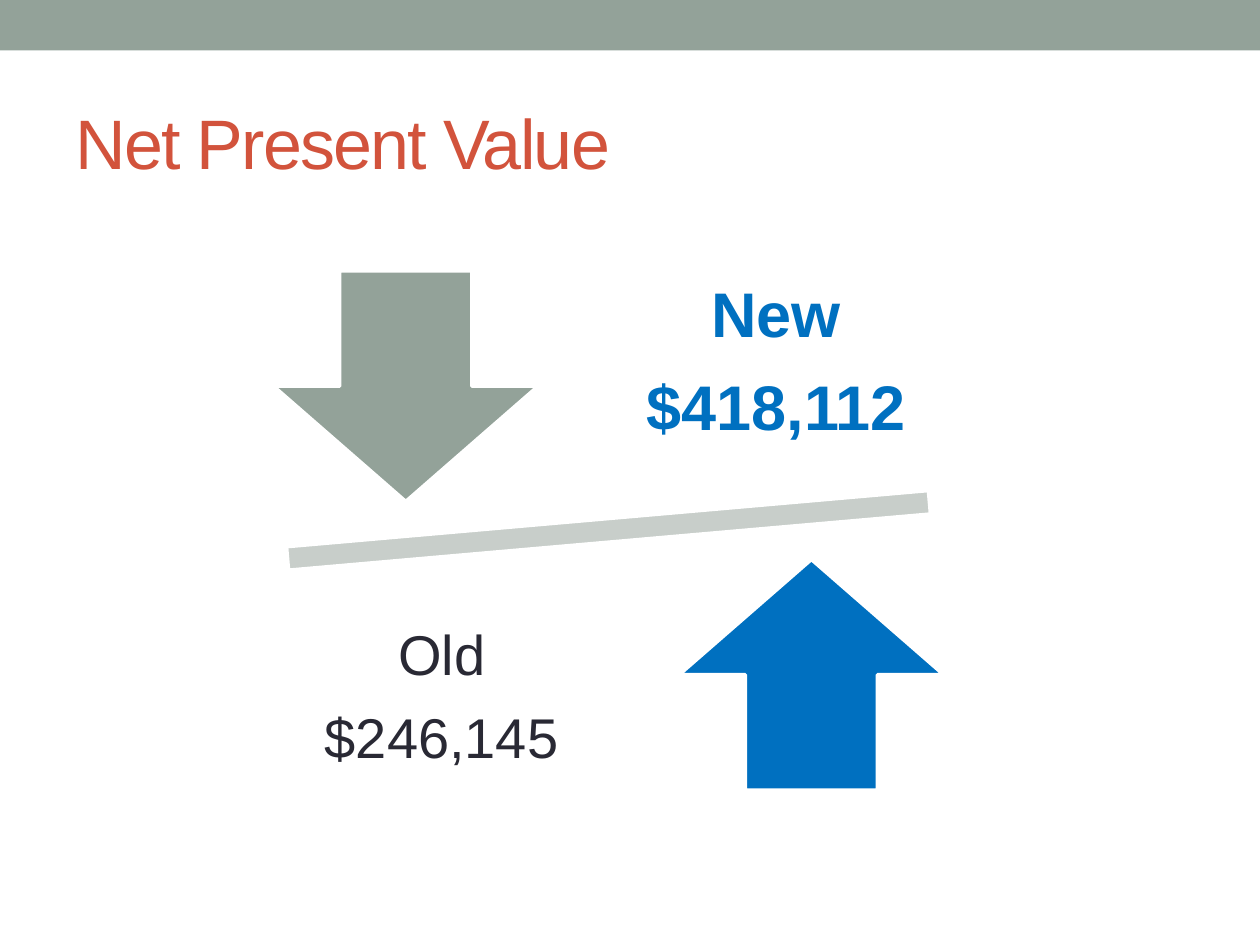
from dataclasses import dataclass

from pptx import Presentation
from pptx.dml.color import RGBColor
from pptx.enum.shapes import MSO_SHAPE
from pptx.enum.text import MSO_ANCHOR, PP_ALIGN
from pptx.util import Pt


@dataclass(frozen=True)
class Theme:
    font: str = "Arial"
    sage: str = "93A299"
    pale_sage: str = "C8CECA"
    red: str = "D2533C"
    blue: str = "0070C0"
    dark: str = "292934"
    white: str = "FFFFFF"
    title_size: int = 40
    new_size: int = 36
    old_size: int = 32
    outline: float = 2.08


def write_text(frame, lines, *, font, size, color, bold=False, align=PP_ALIGN.LEFT,
               line_spacing=1.0, space_after=0, tracking=0):
    for index, line in enumerate(lines):
        paragraph = frame.add_paragraph() if index else frame.paragraphs[0]
        paragraph.alignment = align
        paragraph.line_spacing = line_spacing
        paragraph.space_after = Pt(space_after)
        run = paragraph.add_run()
        run.text = line
        run.font.name = font
        run.font.size = Pt(size)
        run.font.bold = bold
        run.font.color.rgb = RGBColor.from_string(color)
        if tracking:
            run.font._element.set("spc", str(tracking * 100))


class SlideBuilder:
    def __init__(self, slide, theme):
        self.slide = slide
        self.theme = theme

    def shape(self, kind, box, color, outlined=True, rotation=0):
        shape = self.slide.shapes.add_shape(kind, *map(Pt, box))
        shape.shadow.inherit = False
        shape.rotation = rotation
        shape.fill.solid()
        shape.fill.fore_color.rgb = RGBColor.from_string(color)
        if outlined:
            shape.line.color.rgb = RGBColor.from_string(self.theme.white)
            shape.line.width = Pt(self.theme.outline)
        else:
            shape.line.fill.background()

    def text(self, lines, box, margins=(7.2, 3.6), **text_format):
        frame = self.slide.shapes.add_textbox(*map(Pt, box)).text_frame
        frame.word_wrap = True
        frame.vertical_anchor = MSO_ANCHOR.MIDDLE
        frame.margin_left = frame.margin_right = Pt(margins[0])
        frame.margin_top = frame.margin_bottom = Pt(margins[1])
        write_text(frame, lines, font=self.theme.font, **text_format)

    def value(self, label, amount, box, size, color, bold=False):
        inset = size * 0.56
        self.text([label, amount], box, (inset, inset), size=size, color=color, bold=bold,
                  align=PP_ALIGN.CENTER, line_spacing=0.9, space_after=round(size * 0.39, 1))


def main():
    theme = Theme()
    presentation = Presentation()
    presentation.slide_width = Pt(720)
    presentation.slide_height = Pt(540)
    slide = presentation.slides.add_slide(presentation.slide_layouts[6])
    builder = SlideBuilder(slide, theme)

    builder.shape(MSO_SHAPE.RECTANGLE, (0, 0, 720, 28.8), theme.sage, outlined=False)
    builder.text(["Net Present Value"], (36, 41.8, 648, 77.8),
                 size=theme.title_size, color=theme.red, tracking=-1)

    builder.shape(MSO_SHAPE.MATH_MINUS, (97.2, 274.3, 501.1, 57.6), theme.pale_sage, rotation=355)
    builder.shape(MSO_SHAPE.DOWN_ARROW, (156.3, 154.8, 151.2, 131.8), theme.sage)
    builder.value("New", "$418,112", (319, 138.2, 249.1, 139), theme.new_size, theme.blue, bold=True)
    builder.shape(MSO_SHAPE.UP_ARROW, (388.1, 319.7, 151.2, 131.8), theme.blue)
    builder.value("Old", "$246,145", (150.5, 329.8, 203.8, 139), theme.old_size, theme.dark)

    presentation.save("out.pptx")


if __name__ == "__main__":
    main()
